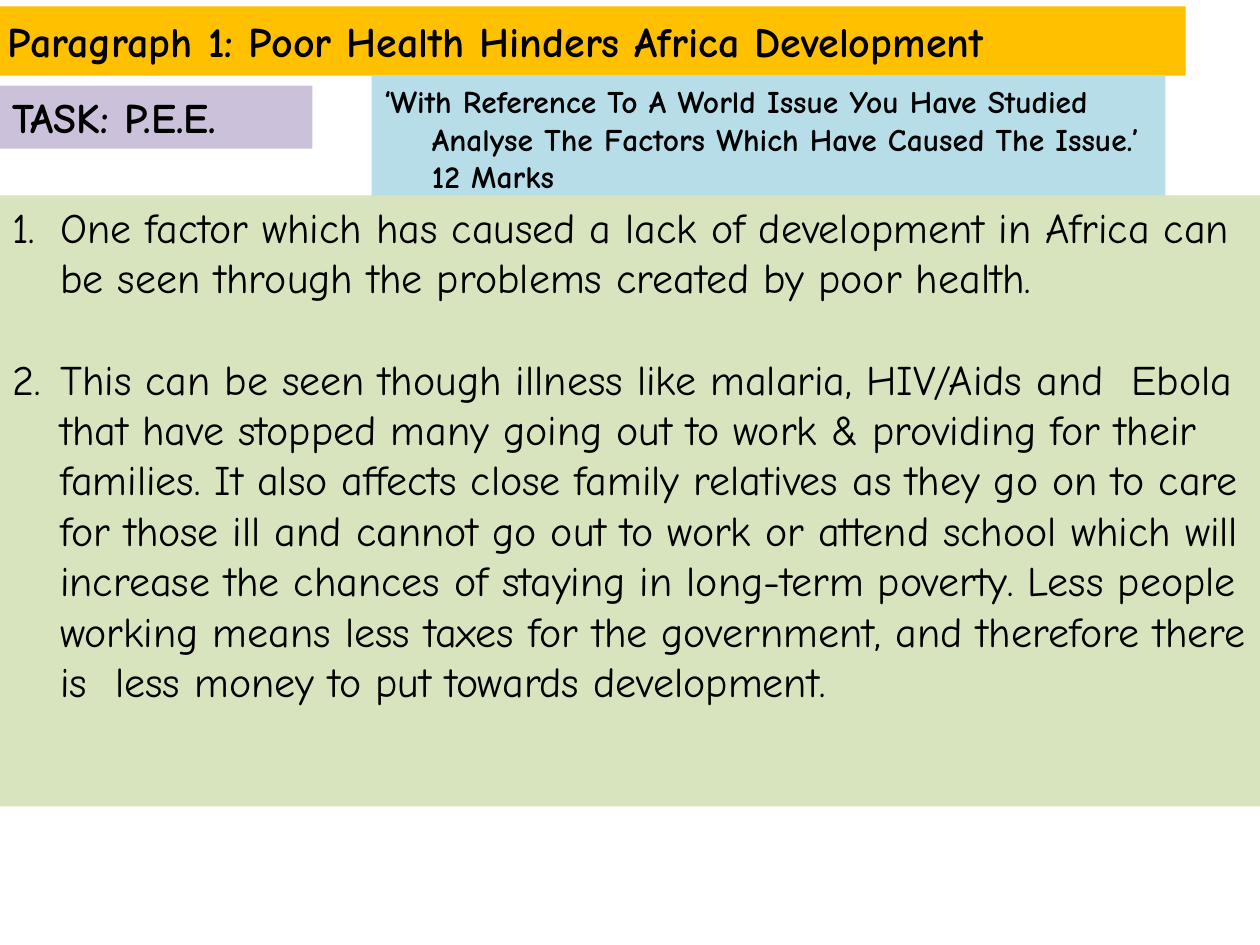
from pptx import Presentation
from pptx.dml.color import RGBColor
from pptx.enum.text import MSO_ANCHOR
from pptx.util import Inches, Pt
from lxml.etree import SubElement
from pptx.oxml.ns import qn

COLORS = {
    "title": "FFC000",
    "question": "B7DEE8",
    "task": "CCC1DA",
    "answer": "D7E4BD",
    "text": "000000",
}
FONT = "Comic Neue"
HANG = Inches(0.38)

POINTS = [
    "One factor which has caused a lack of development in Africa can be seen "
    "through the problems created by poor health.",
    "This can be seen though illness like malaria, HIV/Aids and  Ebola that have "
    "stopped many going out to work & providing for their families. It also affects "
    "close family relatives as they go on to care for those ill and cannot go out to "
    "work or attend school which will increase the chances of staying in long-term "
    "poverty. Less people working means less taxes for the government, and therefore "
    "there is  less money to put towards development.",
]


def add_panel(slide, box, color, paragraphs, size=24, bold=True):
    sp = slide.shapes.add_textbox(*[Inches(v) for v in box])
    sp.fill.solid()
    sp.fill.fore_color.rgb = RGBColor.from_string(COLORS[color])
    tf = sp.text_frame
    tf.word_wrap = True
    tf.text = "\n".join(paragraphs)
    for p in tf.paragraphs:
        font = p.runs[0].font
        font.name = FONT
        font.size = Pt(size)
        font.bold = bold
        font.color.rgb = RGBColor.from_string(COLORS["text"])
    return tf


def set_hanging(p):
    pPr = p._p.get_or_add_pPr()
    pPr.set("marL", str(HANG))
    pPr.set("indent", str(-HANG))
    return pPr


def add_title(slide, box):
    tf = add_panel(slide, box, "title",
                   ["Paragraph 1: Poor Health Hinders Africa Development"])
    tf.vertical_anchor = MSO_ANCHOR.MIDDLE


def add_question(slide, box):
    tf = add_panel(slide, box, "question",
                   ["‘With Reference To A World Issue You Have Studied Analyse "
                    "The Factors Which Have Caused The Issue.’ 12 Marks"], size=18)
    set_hanging(tf.paragraphs[0])


def add_task(slide, box):
    add_panel(slide, box, "task", ["TASK: P.E.E."])


def add_answer(slide, box):
    tf = add_panel(slide, box, "answer", POINTS, bold=False)
    for p in tf.paragraphs[1:]:
        p.space_before = Pt(29)
    for p in tf.paragraphs:
        pPr = set_hanging(p)
        SubElement(pPr, qn("a:buFont"), typeface="+mj-lt")
        SubElement(pPr, qn("a:buAutoNum"), type="arabicPeriod")


def main():
    prs = Presentation()
    prs.slide_width = Inches(10)
    prs.slide_height = Inches(7.5)
    s = prs.slides.add_slide(prs.slide_layouts[6])
    add_title(s, (-0.04, 0.05, 9.45, 0.55))
    add_question(s, (2.95, 0.6, 6.3, 1.01))
    add_task(s, (0, 0.68, 2.48, 0.5))
    add_answer(s, (0, 1.55, 10, 4.85))
    prs.save("out.pptx")


if __name__ == "__main__":
    main()
